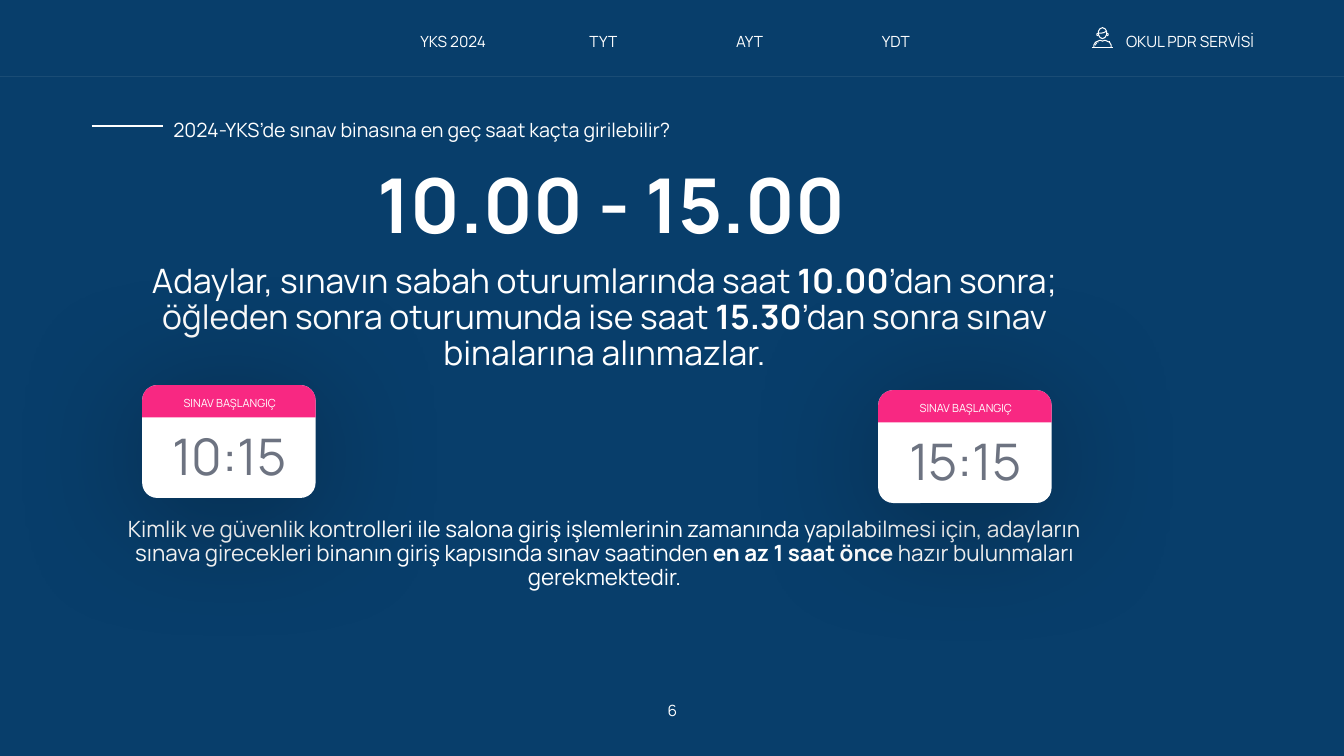
from lxml.etree import SubElement
from pptx import Presentation
from pptx.dml.color import RGBColor
from pptx.enum.shapes import MSO_CONNECTOR as Connector, MSO_SHAPE as Shape
from pptx.enum.text import MSO_ANCHOR as Anchor, MSO_AUTO_SIZE as AutoSize, PP_ALIGN as Align
from pptx.oxml.ns import qn
from pptx.util import Emu, Pt

PX = 9144  # 100 px to the inch
FONT = "Manrope"
NAVY, WHITE, PINK, GREY, RULE = "083E6B", "FFFFFF", "F82882", "6D7381", "F2F2F2"

# Text, left, top, width, height and format of each single-line label
LABELS = [
    ("YKS 2024", (384, 27, 131, 29), {"size": 11}),
    ("TYT", (537, 27, 123, 29), {"size": 11}),
    ("AYT", (682, 27, 123, 29), {"size": 11}),
    ("YDT", (827, 27, 123, 29), {"size": 11}),
    ("OKUL PDR SERVİSİ", (1107, 27, 205, 29), {"size": 11, "align": Align.LEFT}),
    ("6", (586, 691, 162, 29), {"size": 11}),
    ("2024-YKS’de sınav binasına en geç saat kaçta girilebilir?",
     (162, 105, 579, 41), {"size": 14, "align": Align.LEFT, "spacing": 1.3}),
]
TITLE = ("10.00 - 15.00", (273, 161, 667, 93))
BODY_AREA = (107, 257, 985, 337)
# Size, space before and (text, bold) spans of each paragraph
BODY = [
    (24, 0, [("Adaylar, sınavın sabah oturumlarında saat ", False),
             ("10.00", True),
             ("’dan sonra; öğleden sonra oturumunda ise saat ", False),
             ("15.30", True),
             ("’dan sonra sınav binalarına alınmazlar.", False)]),
    (16, 103.5, [("Kimlik ve güvenlik kontrolleri ile salona giriş işlemlerinin "
                  "zamanında yapılabilmesi için, adayların sınava girecekleri "
                  "binanın giriş kapısında sınav saatinden ", False),
                 ("en az 1 saat önce ", True),
                 ("hazır bulunmaları gerekmektedir.", False)]),
]
CARD_LABEL = "SINAV BAŞLANGIÇ"
CARDS = [("10:15", 141, 382), ("15:15", 871, 387)]
RULES = [((0, 76, 1333, 76), RULE, 0.5, 8), ((91, 125, 162, 125), WHITE, 1, 100)]
# Person icon in tenths of a px: one figure of several strokes, then small accents
ICON_SCALE = PX / 10
FIGURE = [
    [(10830, 475), (11040, 475)],
    [(10850, 475), (10850, 445), (10865, 420), (10890, 408), (10910, 400),
     (10935, 408), (10960, 400), (10980, 408), (11005, 420), (11020, 445), (11020, 475)],
    [(10895, 345), (10895, 310), (10910, 285), (10935, 275), (10960, 285),
     (10975, 310), (10975, 345), (10960, 372), (10935, 384), (10910, 372), (10895, 345)],
    [(10895, 330), (10920, 330), (10950, 323), (10975, 310)],
    [(10893, 330), (10880, 335), (10880, 350), (10893, 355)],
    [(10977, 330), (10990, 335), (10990, 350), (10977, 355)],
]
ACCENTS = [
    [(10860, 450), (10865, 435), (10878, 420), (10882, 428), (10872, 440), (10870, 450)],
    [(10886, 417), (10893, 415), (10895, 422), (10888, 425)],
    [(11001, 412), (11008, 412), (11008, 419), (11001, 419)],
]


def px(*values):
    return [Emu(value * PX) for value in values]


def color(code):
    return RGBColor.from_string(code)


def add_span(para, text, size, code=WHITE, bold=False):
    span = para.add_run()
    span.text = text
    values = {"name": FONT, "size": Pt(size), "bold": bold}
    for name, value in values.items():
        setattr(span.font, name, value)
    span.font.color.rgb = color(code)


def add_box(area):
    box = slide.shapes.add_textbox(*px(*area))
    box.text_frame.word_wrap = True
    return box.text_frame


def add_label(text, area, size, code=WHITE, align=Align.CENTER, spacing=1.0):
    para = add_box(area).paragraphs[0]
    para.alignment, para.line_spacing = align, spacing
    add_span(para, text, size, code)


def fill_plain(shape, code):
    shape.shadow.inherit = False
    shape.fill.solid()
    shape.fill.fore_color.rgb = color(code)
    shape.line.fill.background()


def add_panel(kind, area, code, corners):
    panel = slide.shapes.add_shape(kind, *px(*area))
    fill_plain(panel, code)
    for index, corner in enumerate(corners):
        panel.adjustments[index] = corner
    return panel


def add_soft_shadow(panel):
    effects = panel._element.spPr.find(qn("a:effectLst"))
    shadow = SubElement(effects, qn("a:outerShdw"), blurRad=str(Pt(100)),
                        dist=str(Pt(10)), dir="5400000", algn="t", rotWithShape="0")
    black = SubElement(shadow, qn("a:srgbClr"), val="000000")
    SubElement(black, qn("a:alpha"), val="32000")


def add_rule(ends, code, width, opacity):
    rule = slide.shapes.add_connector(Connector.STRAIGHT, *px(*ends))
    rule.line.color.rgb = color(code)
    rule.line.width = Pt(width)
    SubElement(rule._element.spPr, qn("a:effectLst"))
    fill = rule._element.spPr.find(".//" + qn("a:srgbClr"))
    SubElement(fill, qn("a:alpha"), val=str(opacity * 1000))


def add_strokes(strokes, close):
    """Draw several point lists as one freeform."""
    builder = slide.shapes.build_freeform(*strokes[0][0], scale=ICON_SCALE)
    for index, (start, *points) in enumerate(strokes):
        if index:
            builder.move_to(*start)
        builder.add_line_segments(points, close=close)
    return builder.convert_to_shape()


def add_card(time, left, top):
    card = add_panel(Shape.ROUNDED_RECTANGLE, (left, top, 172, 112), WHITE, [0.134])
    add_soft_shadow(card)
    add_label(time, (left + 7, top + 35, 159, 71), 36, GREY)
    add_panel(Shape.ROUND_2_SAME_RECTANGLE, (left, top, 172, 32), PINK, [0.467, 0])
    add_label(CARD_LABEL, (left + 11, top + 8, 152, 34), 8, spacing=0.9)


deck = Presentation()
deck.slide_width, deck.slide_height = px(1333, 750)
slide = deck.slides.add_slide(deck.slide_layouts[5])
slide.background.fill.solid()
slide.background.fill.fore_color.rgb = color(NAVY)

title_text, title_area = TITLE
title = slide.shapes.title
title.left, title.top, title.width, title.height = px(*title_area)
frame = title.text_frame
frame.auto_size, frame.vertical_anchor = AutoSize.NONE, Anchor.MIDDLE
para = frame.paragraphs[0]
para.alignment, para.line_spacing = Align.CENTER, 0.9
add_span(para, title_text, 54, bold=True)

for text, area, style in LABELS:
    add_label(text, area, **style)
for rule in RULES:
    add_rule(*rule)

figure = add_strokes(FIGURE, close=False)
figure.shadow.inherit = False
figure.fill.background()
figure.line.color.rgb = color(WHITE)
figure.line.width = Pt(0.75)
for accent in ACCENTS:
    fill_plain(add_strokes([accent], close=True), WHITE)

frame = add_box(BODY_AREA)
for index, (size, space, spans) in enumerate(BODY):
    para = frame.add_paragraph() if index else frame.paragraphs[0]
    para.alignment, para.line_spacing = Align.CENTER, 0.9
    if space:
        para.space_before = Pt(space)
    for text, bold in spans:
        add_span(para, text, size, bold=bold)

for card in CARDS:
    add_card(*card)

deck.save("out.pptx")
